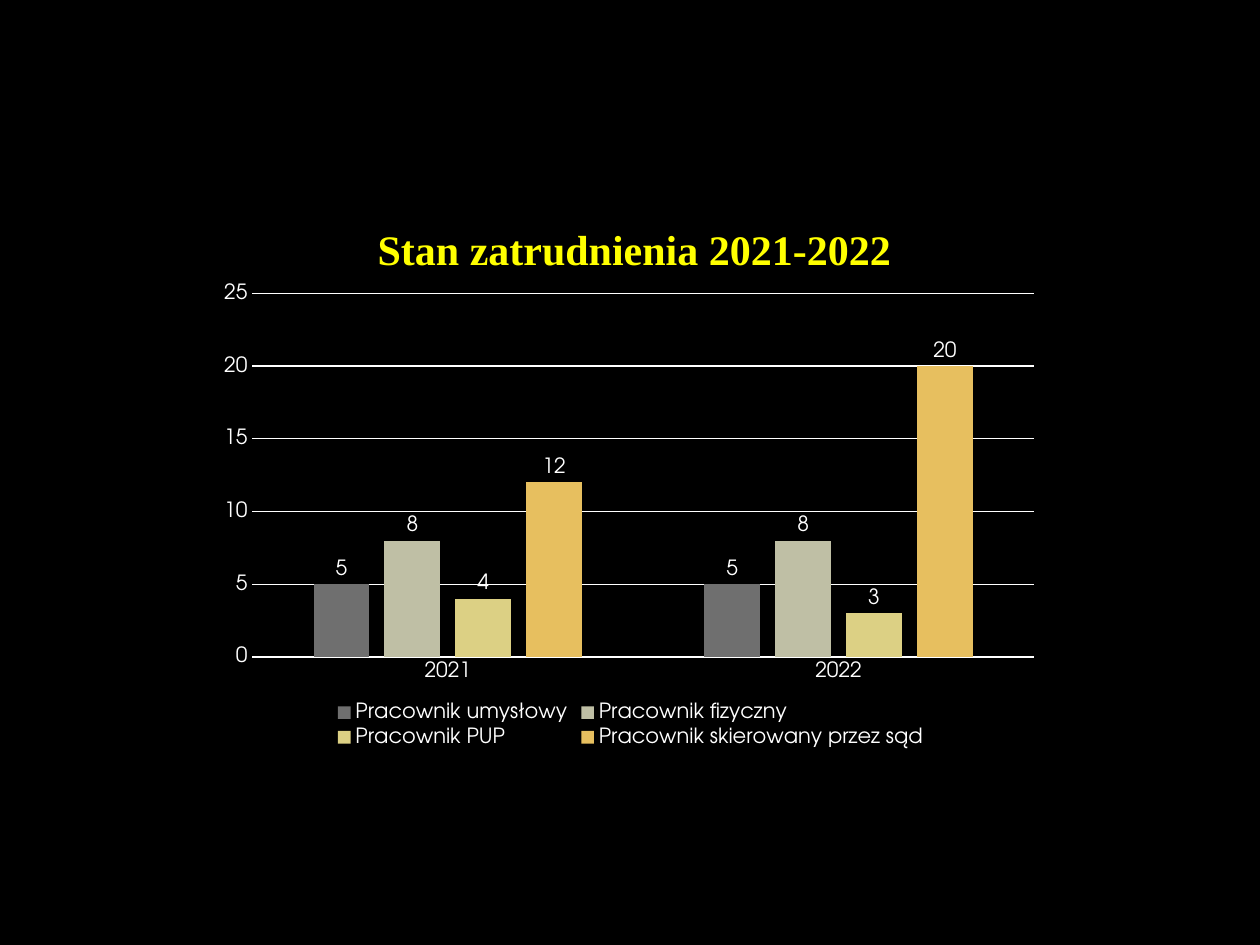
from lxml.etree import SubElement
from pptx import Presentation
from pptx.chart.data import CategoryChartData
from pptx.dml.color import RGBColor
from pptx.enum.chart import (XL_CHART_TYPE, XL_LABEL_POSITION,
                             XL_LEGEND_POSITION, XL_TICK_MARK)
from pptx.oxml.ns import qn
from pptx.util import Inches, Pt

FACE = "TeX Gyre Adventor"
WHITE = "FFFFFF"
YEARS = ["2021", "2022"]
STAFF = [
    ("Pracownik umysłowy", (5, 5), "6F6F6F"),
    ("Pracownik fizyczny", (8, 8), "BFBFA5"),
    ("Pracownik PUP", (4, 3), "DCD084"),
    ("Pracownik skierowany przez sąd", (12, 20), "E7BF5F"),
]


def paint(target, color):
    target.solid()
    target.fore_color.rgb = RGBColor.from_string(color)


def style(font, size=12, color=WHITE, face=FACE, bold=False):
    font.size = Pt(size)
    font.bold = bold
    font.name = face
    font.color.rgb = RGBColor.from_string(color)


def rule(line):
    line.width = Pt(0.75)
    paint(line.fill, WHITE)


def place(node, index, **sides):
    for old in node.findall(qn("c:layout")):
        node.remove(old)
    layout = SubElement(node, qn("c:layout"))
    node.insert(index, layout)
    manual = SubElement(layout, qn("c:manualLayout"))
    if "w" in sides:
        SubElement(manual, qn("c:layoutTarget")).set("val", "inner")
    for side in "xy":
        SubElement(manual, qn(f"c:{side}Mode")).set("val", "edge")
    for side, value in sides.items():
        SubElement(manual, qn(f"c:{side}")).set("val", str(value))


def add_title(chart, text):
    chart.has_title = True
    frame = chart.chart_title.text_frame
    run = frame.paragraphs[0].add_run()
    run.text = text
    style(run.font, 24, "FFFF00", "Times New Roman", True)
    chart.chart_title.include_in_layout = False
    place(chart._chartSpace.chart.find(qn("c:title")), 1, x=0.19, y=0.04)


def set_axes(chart):
    for axis in (chart.category_axis, chart.value_axis):
        axis.major_tick_mark = XL_TICK_MARK.NONE
        axis.minor_tick_mark = XL_TICK_MARK.NONE
        style(axis.tick_labels.font)
    rule(chart.category_axis.format.line)
    value = chart.value_axis
    value.format.line.fill.background()
    value.minimum_scale, value.maximum_scale, value.major_unit = 0, 25, 5
    value.has_major_gridlines = True
    rule(value.major_gridlines.format.line)


def set_bars(plot):
    plot.vary_by_categories = False
    plot.gap_width = 219
    plot.overlap = -27
    for series, (_, _, color) in zip(plot.series, STAFF):
        paint(series.format.fill, color)
        labels = series.data_labels
        labels.show_value = True
        labels.position = XL_LABEL_POSITION.OUTSIDE_END
        style(labels.font)


def add_legend(chart):
    chart.has_legend = True
    chart.legend.position = XL_LEGEND_POSITION.BOTTOM
    chart.legend.include_in_layout = False
    style(chart.legend.font)


def add_chart(slide):
    data = CategoryChartData()
    data.categories = YEARS
    for name, values, _ in STAFF:
        data.add_series(name, values)
    chart = slide.shapes.add_chart(
        XL_CHART_TYPE.COLUMN_CLUSTERED, Inches(1.67), Inches(1.53),
        Inches(6.67), Inches(4.44), data).chart
    style(chart.font, 10)
    add_title(chart, "Stan zatrudnienia 2021-2022")
    set_axes(chart)
    set_bars(chart.plots[0])
    add_legend(chart)
    place(chart._chartSpace.chart.plotArea, 0, x=0.05, y=0.18, w=0.93, h=0.65)


def main():
    deck = Presentation()
    deck.slide_width, deck.slide_height = Inches(10), Inches(7.5)
    slide = deck.slides.add_slide(deck.slide_layouts[6])
    paint(slide.background.fill, "000000")
    add_chart(slide)
    deck.save("out.pptx")


if __name__ == "__main__":
    main()
